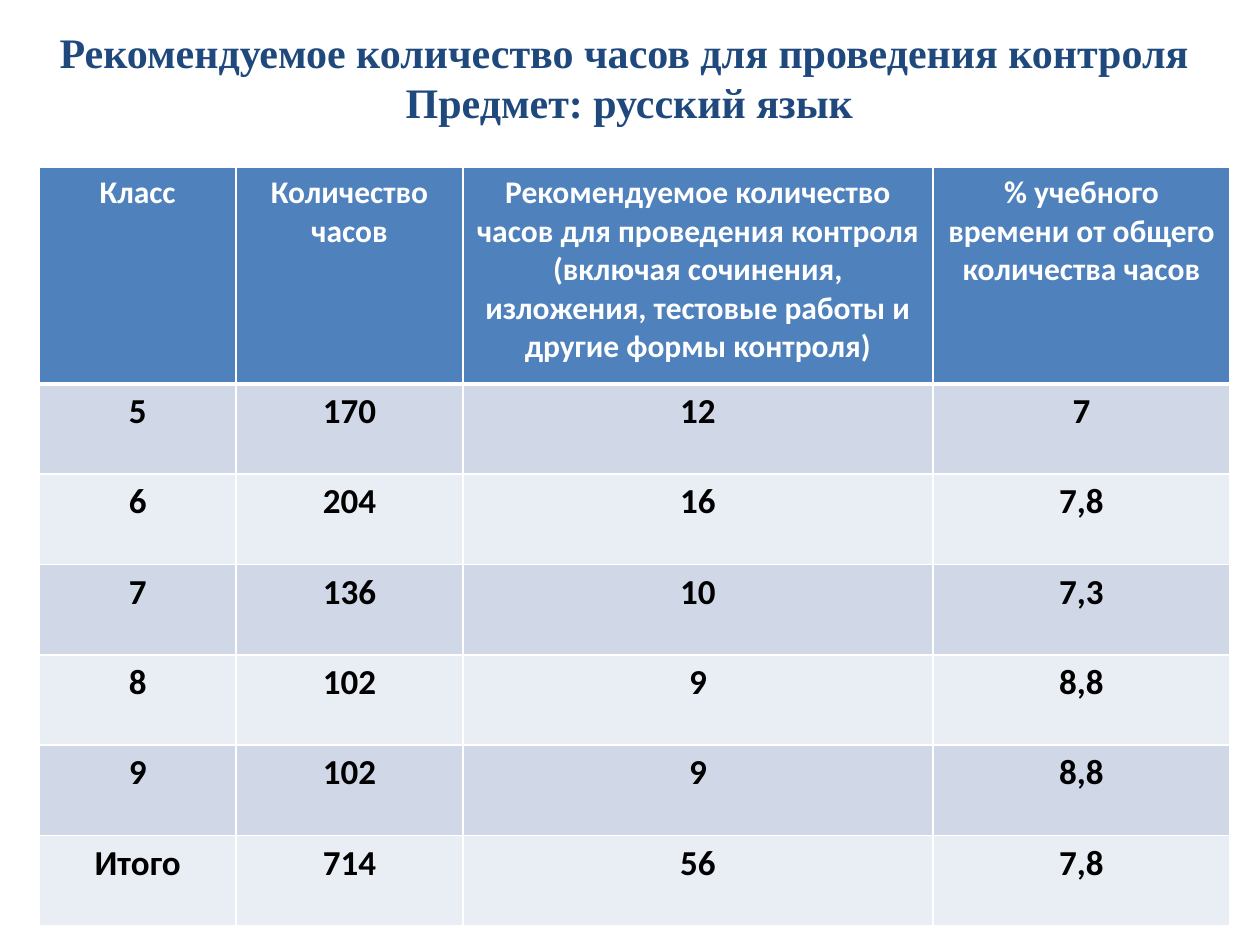
import dataclasses

import lxml.etree
import pptx
import pptx.dml.color
import pptx.enum.text
import pptx.oxml.ns
import pptx.util

Pt = pptx.util.Pt


@dataclasses.dataclass(frozen=True)
class Theme:
    title_font: str = "Times New Roman"
    table_font: str = "Calibri"
    title_size: int = 24
    header_size: int = 18
    body_size: int = 20
    title_color: str = "1F497D"
    header_fill: str = "4F81BD"
    header_color: str = "FFFFFF"
    body_color: str = "000000"
    band_fills: tuple[str, str] = ("D0D8E8", "E9EDF4")
    border_color: str = "FFFFFF"
    border: int = 1
    header_rule: int = 3


@dataclasses.dataclass(frozen=True)
class RowStyle:
    fill: str
    color: str
    size: int
    top: int
    bottom: int


THEME = Theme()
TITLE = ("Рекомендуемое количество часов для проведения контроля ",
         "Предмет: русский язык")
HEADER = ("Класс", "Количество часов",
          "Рекомендуемое количество часов для проведения контроля (включая "
          "сочинения, изложения, тестовые работы и другие формы контроля)",
          "% учебного времени от общего количества часов")
HOURS = (("5", "170", "12", "7"),
         ("6", "204", "16", "7,8"),
         ("7", "136", "10", "7,3"),
         ("8", "102", "9", "8,8"),
         ("9", "102", "9", "8,8"),
         ("Итого", "714", "56", "7,8"))
COLUMN_WIDTHS = (112.4, 129.6, 268.6, 169.9)
HEADER_HEIGHT, BODY_HEIGHT = 123.6, 51.6


def write_text(tf, *lines: str, font: str, size: int, color: str) -> None:
    """Write each line as a bold, centred paragraph."""
    for i, line in enumerate(lines):
        p = tf.paragraphs[0] if i == 0 else tf.add_paragraph()
        p.alignment = pptx.enum.text.PP_ALIGN.CENTER
        r = p.add_run()
        r.text = line
        r.font.name = font
        r.font.size = Pt(size)
        r.font.bold = True
        r.font.color.rgb = pptx.dml.color.RGBColor.from_string(color)


def set_borders(cell, **widths: int) -> None:
    """Draw solid borders; the sides must come in the order L, R, T, B."""
    qn = pptx.oxml.ns.qn
    tc_pr = cell._tc.get_or_add_tcPr()
    for i, (side, width) in enumerate(widths.items()):
        ln = lxml.etree.Element(qn(f"a:ln{side}"), w=str(Pt(width)))
        fill = lxml.etree.SubElement(ln, qn("a:solidFill"))
        lxml.etree.SubElement(fill, qn("a:srgbClr"), val=THEME.border_color)
        tc_pr.insert(i, ln)


def add_title(s) -> None:
    sp = s.shapes.title
    sp.left, sp.top, sp.width, sp.height = Pt(16.6), Pt(11.5), Pt(686), Pt(65.5)
    tf = sp.text_frame
    tf.word_wrap = True
    tf.auto_size = pptx.enum.text.MSO_AUTO_SIZE.SHAPE_TO_FIT_TEXT
    tf.vertical_anchor = pptx.enum.text.MSO_ANCHOR.TOP
    write_text(tf, *TITLE, font=THEME.title_font, size=THEME.title_size,
               color=THEME.title_color)


def row_style(row: int) -> RowStyle:
    if row == 0:
        return RowStyle(THEME.header_fill, THEME.header_color, THEME.header_size,
                        THEME.border, THEME.header_rule)
    return RowStyle(THEME.band_fills[(row - 1) % 2], THEME.body_color, THEME.body_size,
                    THEME.header_rule if row == 1 else THEME.border, THEME.border)


def add_hours_table(s) -> None:
    rows = (HEADER, *HOURS)
    height = HEADER_HEIGHT + BODY_HEIGHT * len(HOURS)
    table = s.shapes.add_table(len(rows), len(HEADER), Pt(22.5), Pt(95.8),
                               Pt(sum(COLUMN_WIDTHS)), Pt(height)).table
    for column, width in zip(table.columns, COLUMN_WIDTHS):
        column.width = Pt(width)
    for i, values in enumerate(rows):
        table.rows[i].height = Pt(BODY_HEIGHT if i else HEADER_HEIGHT)
        style = row_style(i)
        for j, value in enumerate(values):
            cell = table.cell(i, j)
            cell.fill.solid()
            cell.fill.fore_color.rgb = pptx.dml.color.RGBColor.from_string(style.fill)
            set_borders(cell, L=THEME.border, R=THEME.border,
                        T=style.top, B=style.bottom)
            write_text(cell.text_frame, value, font=THEME.table_font,
                       size=style.size, color=style.color)


def main() -> None:
    prs = pptx.Presentation()
    prs.slide_width, prs.slide_height = Pt(720), Pt(540)
    title_only = prs.slide_layouts[5]
    s = prs.slides.add_slide(title_only)
    add_title(s)
    add_hours_table(s)
    prs.save("out.pptx")


if __name__ == "__main__":
    main()
